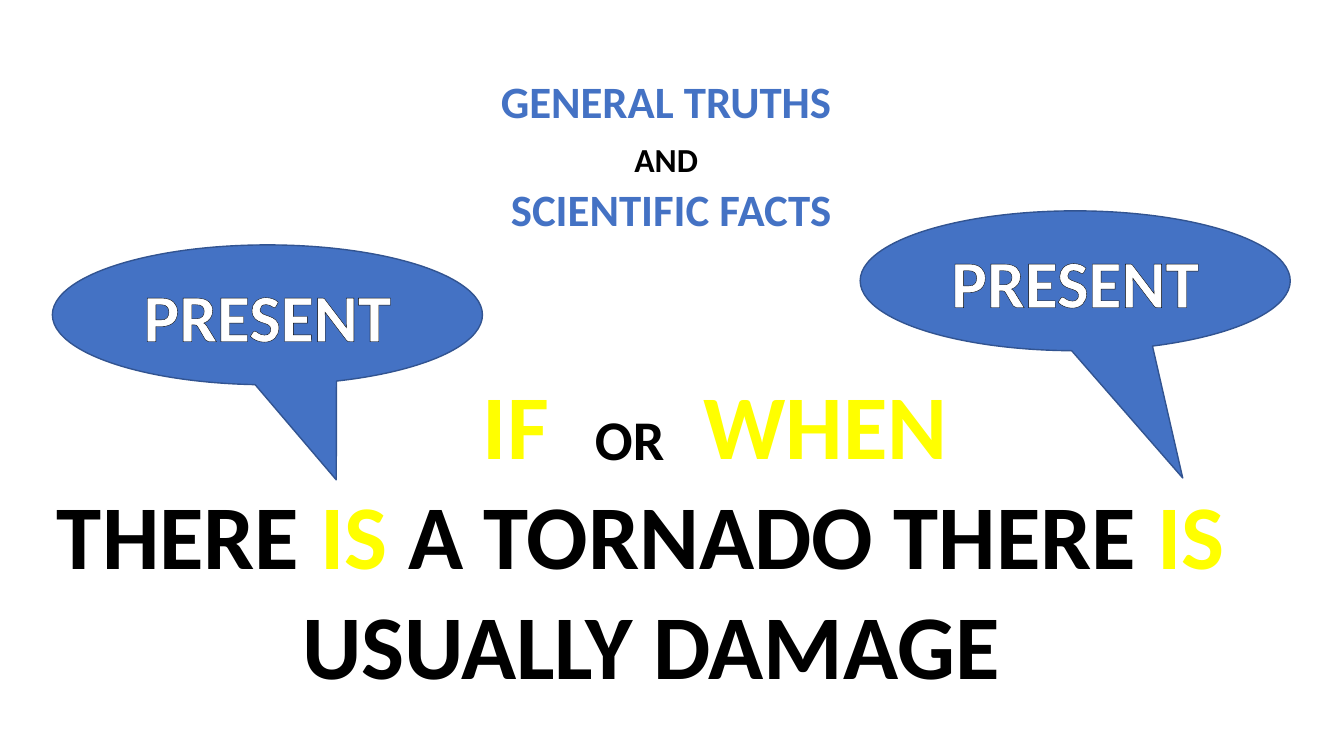
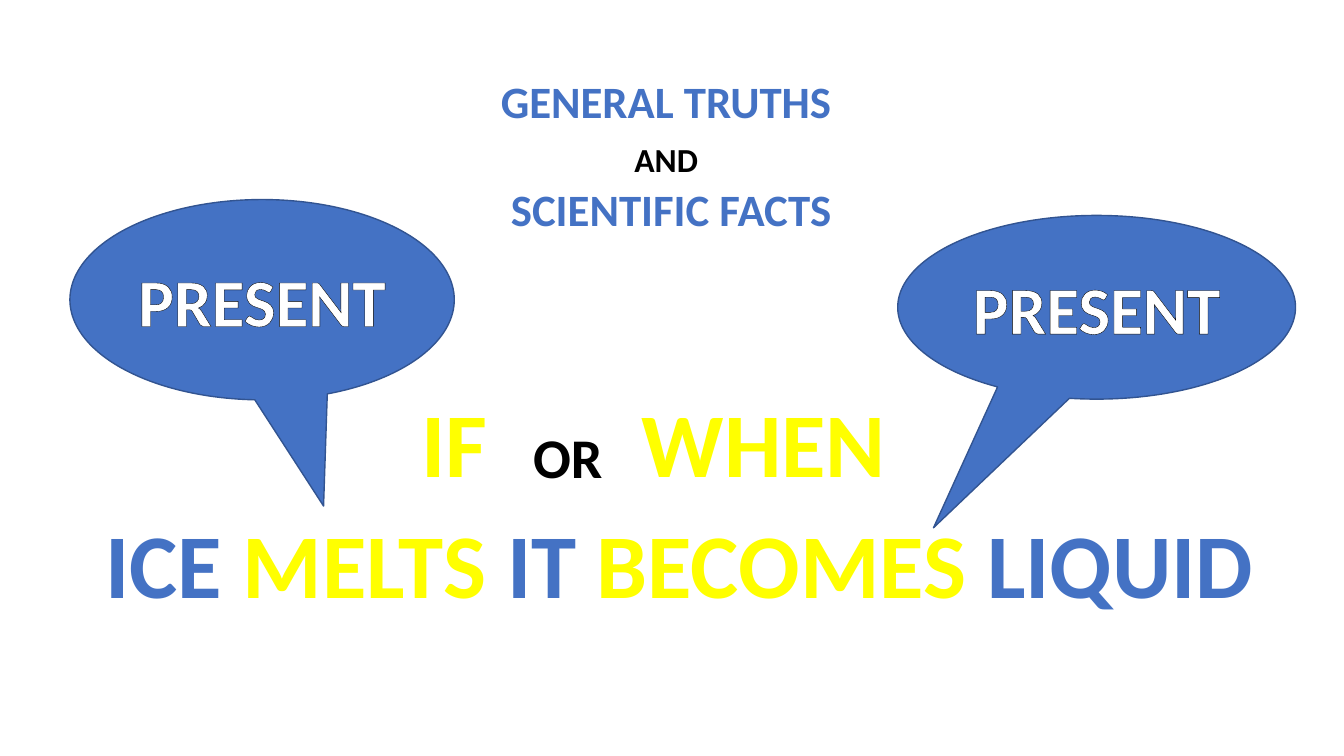
from lxml import etree
from pptx import Presentation, util as u
from pptx.dml.color import RGBColor
from pptx.enum import shapes, text
from pptx.oxml.ns import qn

BLUE = RGBColor(0x44, 0x72, 0xC4)
EDGE = RGBColor(0x32, 0x54, 0x91)
YELLOW = RGBColor(0xFF, 0xFF, 0x00)
BLACK = RGBColor(0x00, 0x00, 0x00)
WHITE = RGBColor(0xFF, 0xFF, 0xFF)
FONT = "Calibri"
BIG = 65

prs = Presentation()
prs.slide_width, prs.slide_height = u.Inches(13.33), u.Inches(7.5)
COL, ROW = prs.slide_width / 100, prs.slide_height / 100


def place(x, y, w, h):
    """Turn percentages of the slide into a position and size."""
    return int(x * COL), int(y * ROW), int(w * COL), int(h * ROW)


def write(sp, paragraphs, wrap=True, align=text.PP_ALIGN.CENTER):
    """Fill a shape with paragraphs of (text, size, colour, outline) runs."""
    tf = sp.text_frame
    tf.word_wrap = wrap
    for i, runs in enumerate(paragraphs):
        p = tf.paragraphs[0] if i == 0 else tf.add_paragraph()
        p.alignment = align
        for words, size, colour, outline in runs:
            r = p.add_run()
            r.text = words
            r.font.name, r.font.size, r.font.bold = FONT, u.Pt(size), True
            r.font.color.rgb = colour
            if outline:
                ln = etree.Element(qn("a:ln"), w=str(u.Pt(outline)))
                fill = etree.SubElement(ln, qn("a:solidFill"))
                etree.SubElement(fill, qn("a:srgbClr"), val=str(BLACK))
                r.font._element.insert(0, ln)


TITLE = [
    [("GENERAL TRUTHS ", 32, BLUE, 0.75)],
    [("AND", 24, BLACK, 0), (" ", 32, BLACK, 0)],
    [("SCIENTIFIC FACTS", 32, BLUE, 0.75)],
]

# Conjunctions: words, offset from the group's corner, width, height, size, look
CONJUNCTIONS = [
    ("OR", 8.2, 4.7, 6.9, 10.3, 40, BLACK, 0, text.PP_ALIGN.CENTER),
    ("IF", 0, 0, 7.1, 15.9, BIG, YELLOW, 2.25, text.PP_ALIGN.LEFT),
    ("WHEN", 16.4, 0, 19.8, 15.9, BIG, YELLOW, 2.25, text.PP_ALIGN.LEFT),
]

# Callouts: place, pointer tip, text outline
SLIDES = [
    dict(
        conjunctions=(35.2, 48.1),
        at=(3.1, 62.7, 90.7, 30.5),
        sentence=[
            [("THERE ", BIG, BLACK, 0), ("IS", BIG, YELLOW, 2.25),
             (" A TORNADO THERE ", BIG, BLACK, 0), ("IS ", BIG, YELLOW, 2.25)],
            [("USUALLY DAMAGE", BIG, BLACK, 0)],
        ],
        callouts=[((3.9, 32.4, 32, 18.5), (0.16, 1.18), 1.5),
                  ((64, 27.9, 32, 18.5), (0.25, 1.41), 0.75)],
    ),
    dict(
        conjunctions=(30.6, 50.5),
        at=(5.2, 66.5, 90.7, 15.9),
        sentence=[
            [("ICE ", BIG, BLUE, 0.75), ("MELTS ", BIG, YELLOW, 2.25),
             ("IT ", BIG, BLUE, 0.75), ("BECOMES ", BIG, YELLOW, 2.25),
             ("LIQUID", BIG, BLUE, 0.75)],
        ],
        callouts=[((5.2, 26.4, 28.6, 26.5), (0.16, 1.03), 2.25),
                  ((66.8, 28.5, 29.6, 24.3), (-0.41, 1.2), 2.25)],
    ),
]

for content in SLIDES:
    s = prs.slides.add_slide(prs.slide_layouts[6])

    # IF or WHEN
    left, top = content["conjunctions"]
    for words, dx, dy, w, h, size, colour, outline, align in CONJUNCTIONS:
        sp = s.shapes.add_textbox(*place(left + dx, top + dy, w, h))
        write(sp, [[(words, size, colour, outline)]], wrap=False, align=align)

    # Example sentence
    write(s.shapes.add_textbox(*place(*content["at"])), content["sentence"])

    # Tense callouts pointing at the verbs
    for at, tip, outline in content["callouts"]:
        sp = s.shapes.add_shape(shapes.MSO_SHAPE.OVAL_CALLOUT, *place(*at))
        sp.adjustments[0], sp.adjustments[1] = tip
        sp.shadow.inherit = False
        sp.fill.solid()
        sp.fill.fore_color.rgb = BLUE
        sp.line.color.rgb = EDGE
        sp.line.width = u.Pt(1)
        sp.text_frame.vertical_anchor = text.MSO_ANCHOR.MIDDLE
        write(sp, [[("PRESENT", 48, WHITE, outline)]])

    # Title
    write(s.shapes.add_textbox(*place(35.9, 9.1, 28.1, 22.9)), TITLE)

prs.save("out.pptx")
